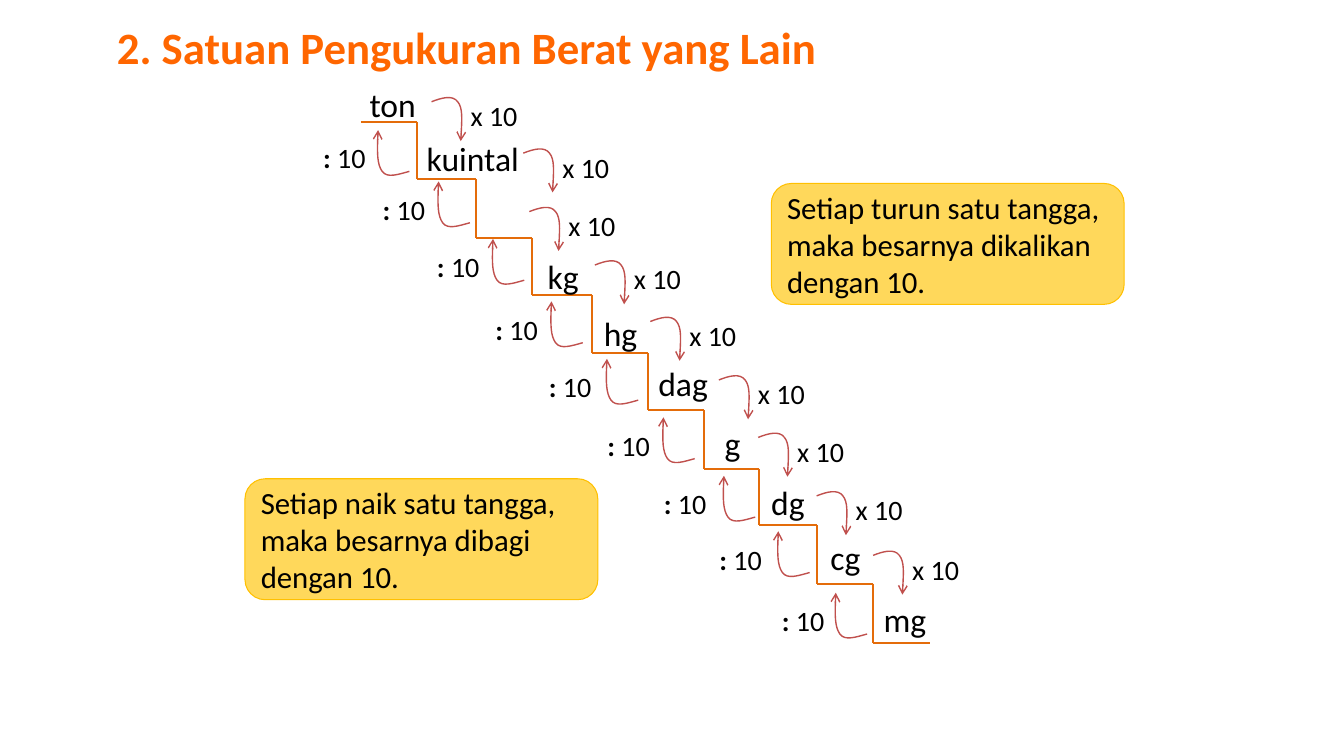
from pptx import Presentation
from pptx.dml.color import RGBColor
from pptx.enum.shapes import MSO_CONNECTOR, MSO_SHAPE
from pptx.enum.text import MSO_ANCHOR, MSO_AUTO_SIZE, PP_ALIGN
from pptx.oxml.ns import qn
from pptx.util import Inches, Pt
from lxml import etree

STRAIGHT = MSO_CONNECTOR.STRAIGHT
ROUNDED = MSO_SHAPE.ROUNDED_RECTANGLE
TOP, MIDDLE = MSO_ANCHOR.TOP, MSO_ANCHOR.MIDDLE
LEFT, CENTER = PP_ALIGN.LEFT, PP_ALIGN.CENTER
NO_AUTOFIT = MSO_AUTO_SIZE.NONE

STAIR_X = [3.58, 4.14, 4.72, 5.28, 5.87, 6.43, 6.98, 7.53, 8.1, 8.66, 9.22]
STAIR_Y = [1.21, 1.78, 2.36, 2.93, 3.5, 4.07, 4.65, 5.21, 5.79, 6.38]

UNITS = [
    ("ton", 3.39, 0.75, 1.01), ("kuintal", 4.11, 1.28, 1.16),
    ("kg", 5.16, 2.45, 0.85), ("hg", 5.73, 3.02, 0.85),
    ("dag", 6.35, 3.52, 0.85), ("g", 6.84, 4.11, 0.85),
    ("dg", 7.39, 4.7, 0.85), ("cg", 7.96, 5.24, 0.85),
    ("mg", 8.55, 5.86, 0.85),
]

DOWN_CURVE = [(0, 0.04), (0.1, 0), (0.21, -0.03), (0.26, 0.04),
              (0.31, 0.1), (0.3, 0.27), (0.29, 0.43)]
DOWN_STEPS = [(4.28, 0.97), (5.19, 1.48), (5.25, 2.06), (5.9, 2.59), (6.45, 3.15),
              (7.13, 3.73), (7.52, 4.3), (8.1, 4.88), (8.66, 5.47)]

UP_CURVE = [(0.31, 0.41), (0.2, 0.44), (0.09, 0.48), (0.04, 0.41),
            (-0.01, 0.34), (-0.01, 0.17), (0, 0)]
UP_STEPS = [(3.75, 1.29, 3.05), (4.35, 1.8, 3.64), (4.89, 2.37, 4.18),
            (5.47, 2.99, 4.76), (6.02, 3.56, 5.29), (6.58, 4.14, 5.87),
            (7.18, 4.72, 6.43), (7.72, 5.27, 6.98), (8.29, 5.88, 7.6)]

RULES = [
    ("Setiap turun satu tangga, maka besarnya dikalikan dengan 10.", 7.65, 1.82),
    ("Setiap naik satu tangga, maka besarnya dibagi dengan 10.", 2.43, 4.75),
]


def color(hex_value):
    return RGBColor.from_string(hex_value)


class StairSlide:
    font = "Calibri"
    ink = "000000"
    heading = "FF6600"
    stair = "E46C0A"
    arrow = "C0504D"
    note_fill = "FFD85B"
    note_line = "FFC000"

    def __init__(self, presentation):
        self.slide = presentation.slides.add_slide(presentation.slide_layouts[5])
        self.shapes = self.slide.shapes

    def set_text(self, shape, parts, size, align=CENTER, anchor=MIDDLE, ink=ink):
        frame = shape.text_frame
        frame.word_wrap = True
        frame.vertical_anchor = anchor
        paragraph = frame.paragraphs[0]
        paragraph.alignment = align
        paragraph.font.name = self.font
        paragraph.font.size = Pt(size)
        paragraph.font.color.rgb = color(ink)
        for words, bold in parts:
            run = paragraph.add_run()
            run.text = words
            if bold:
                run.font.bold = True

    def title(self, words, x, y, width, height):
        title = self.shapes.title
        title.left, title.top = Inches(x), Inches(y)
        title.width, title.height = Inches(width), Inches(height)
        self.set_text(title, [(words, False)], 32, LEFT, TOP, self.heading)
        title.text_frame.paragraphs[0].font.bold = True
        title.text_frame.word_wrap = False
        title.text_frame.auto_size = NO_AUTOFIT

    def label(self, parts, size, x, y, width, height):
        box = self.shapes.add_textbox(Inches(x), Inches(y), Inches(width), Inches(height))
        self.set_text(box, parts, size)

    def edge(self, x1, y1, x2, y2):
        edge = self.shapes.add_connector(
            STRAIGHT, Inches(x1), Inches(y1), Inches(x2), Inches(y2))
        edge.line.color.rgb = color(self.stair)
        edge.line.width = Pt(1.5)
        etree.SubElement(edge._element.spPr, qn("a:effectLst"))

    def curved_arrow(self, curve, x, y):
        points = [(Inches(x + dx), Inches(y + dy)) for dx, dy in curve]
        builder = self.shapes.build_freeform(*points[0])
        builder.add_line_segments(points[1:], close=False)
        arrow = builder.convert_to_shape()
        arrow.shadow.inherit = False
        arrow.fill.background()
        arrow.line.color.rgb = color(self.arrow)
        arrow.line.width = Pt(1)
        segments = list(arrow._element.iter(qn("a:lnTo")))
        for first, second, third in zip(segments[::3], segments[1::3], segments[2::3]):
            first.tag = qn("a:cubicBezTo")
            for segment in (second, third):
                first.append(segment[0])
                segment.getparent().remove(segment)
        outline = arrow._element.spPr.find(qn("a:ln"))
        etree.SubElement(outline, qn("a:tailEnd"), type="arrow")

    def note(self, words, x, y, width, height):
        note = self.shapes.add_shape(
            ROUNDED, Inches(x), Inches(y), Inches(width), Inches(height))
        note.shadow.inherit = False
        note.fill.solid()
        note.fill.fore_color.rgb = color(self.note_fill)
        note.line.color.rgb = color(self.note_line)
        note.line.width = Pt(0.75)
        self.set_text(note, [(words, False)], 22, LEFT)


def main():
    presentation = Presentation()
    presentation.slide_width = Inches(13.33)
    presentation.slide_height = Inches(7.5)
    page = StairSlide(presentation)

    page.title("2. Satuan Pengukuran Berat yang Lain", 1.06, 0.15, 7.19, 0.64)

    for x, y in DOWN_STEPS:
        page.curved_arrow(DOWN_CURVE, x, y)
        page.label([("x 10", False)], 20, x + 0.27, y - 0.18, 0.7, 0.71)

    for x, y, label_x in UP_STEPS:
        page.curved_arrow(UP_CURVE, x, y)
        page.label([(":", True), (" 10", False)], 20, label_x, y - 0.09, 0.73, 0.73)

    for left, right, y in zip(STAIR_X, STAIR_X[1:], STAIR_Y):
        page.edge(left, y, right, y)
    for x, top, bottom in zip(STAIR_X[1:], STAIR_Y, STAIR_Y[1:]):
        page.edge(x, top, x, bottom)

    for unit, x, y, width in UNITS:
        page.label([(unit, False)], 24, x, y, width, 0.57)

    for rule, x, y in RULES:
        page.note(rule, x, y, 3.5, 1.2)

    presentation.save("out.pptx")


if __name__ == "__main__":
    main()
